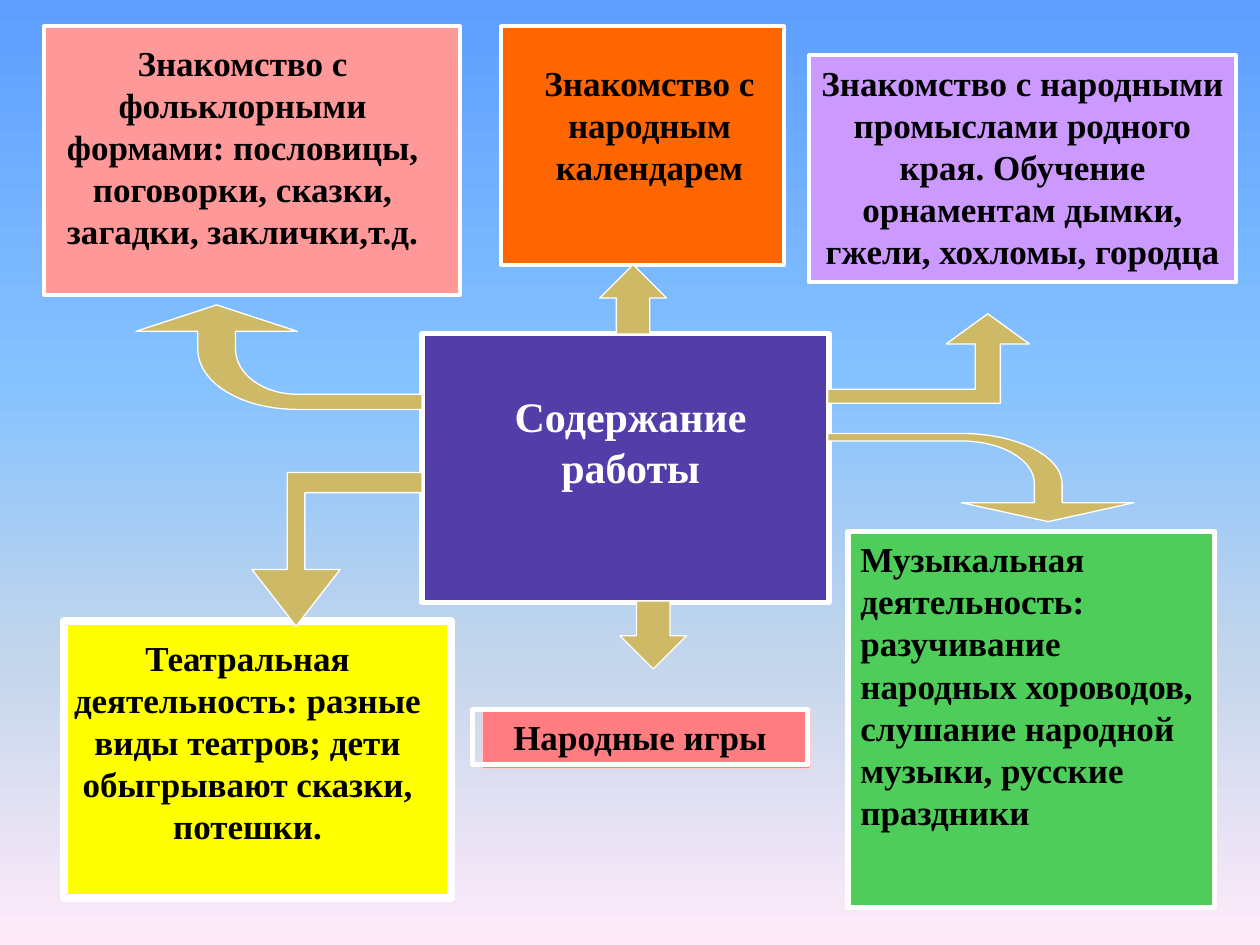
from lxml.etree import SubElement
from pptx import Presentation
from pptx.dml.color import RGBColor
from pptx.enum.shapes import MSO_SHAPE as Shape
from pptx.enum.text import MSO_ANCHOR as Anchor, MSO_AUTO_SIZE as AutoSize, PP_ALIGN as Align
from pptx.oxml.ns import qn
from pptx.util import Inches, Pt

WHITE = RGBColor(0xFF, 0xFF, 0xFF)
BLACK = RGBColor(0x00, 0x00, 0x00)
VIOLET = RGBColor(0x53, 0x3E, 0xA9)
ORANGE = RGBColor(0xFF, 0x66, 0x00)
PINK = RGBColor(0xFF, 0x99, 0x99)
LILAC = RGBColor(0xCC, 0x99, 0xFF)
CORAL = RGBColor(0xFF, 0x7C, 0x80)
PALE_PINK = RGBColor(0xFF, 0xCC, 0xCC)
YELLOW = RGBColor(0xFF, 0xFF, 0x00)
GREEN = RGBColor(0x4F, 0xCD, 0x5B)
SAND = RGBColor(0xCE, 0xB9, 0x66)
SKY_STOPS = [(0, RGBColor(0x5E, 0x9E, 0xFF)), (40, RGBColor(0x85, 0xC2, 0xFF)),
             (70, RGBColor(0xC4, 0xD6, 0xEB)), (100, RGBColor(0xFF, 0xEB, 0xFA))]


def paint(shape, fill, line, width):
    shape.shadow.inherit = False
    if fill is None:
        shape.fill.background()
    else:
        shape.fill.solid()
        shape.fill.fore_color.rgb = fill
    shape.line.color.rgb = line
    shape.line.width = Pt(width)


def write(shape, text, size=20, color=BLACK, align=Align.CENTER):
    frame = shape.text_frame
    frame.word_wrap = True
    frame.auto_size = AutoSize.NONE
    frame.vertical_anchor = Anchor.TOP
    frame.text = text
    paragraph = frame.paragraphs[0]
    paragraph.alignment = align
    font = paragraph.font
    font.name = "Times New Roman"
    font.size = Pt(size)
    font.bold = True
    font.color.rgb = color


prs = Presentation()
prs.slide_width = Inches(10)
prs.slide_height = Inches(7.5)
slide = prs.slides.add_slide(prs.slide_layouts[5])
shapes = slide.shapes

sky = slide.background.fill
sky.gradient()
sky.gradient_angle = 270
stop_list = slide.element.find(".//" + qn("a:gsLst"))
for old_stop in list(stop_list):
    stop_list.remove(old_stop)
for percent, color in SKY_STOPS:
    stop = SubElement(stop_list, qn("a:gs"), pos=str(percent * 1000))
    SubElement(stop, qn("a:srgbClr"), val=str(color))

panels = [
    (Shape.RECTANGLE, (3.35, 2.65, 3.23, 2.13), VIOLET, WHITE, 3),
    (Shape.RECTANGLE, (3.98, 0.21, 2.24, 1.89), ORANGE, WHITE, 2.25),
    (Shape.RECTANGLE, (0.35, 0.21, 3.3, 2.13), PINK, WHITE, 2.25),
    (Shape.RECTANGLE, (3.83, 5.63, 2.6, 0.47), CORAL, PALE_PINK, 0.75),
    (Shape.RECTANGLE, (0.51, 4.93, 3.07, 2.2), YELLOW, WHITE, 4.5),
    (Shape.UP_ARROW, (4.76, 2.1, 0.53, 0.55), SAND, WHITE, 0.75),
    (Shape.DOWN_ARROW, (4.92, 4.77, 0.53, 0.54), SAND, WHITE, 0.75),
]
for kind, place, fill, line, width in panels:
    paint(shapes.add_shape(kind, *map(Inches, place)), fill, line, width)

topic_boxes = [
    ("Знакомство с народными промыслами родного края. Обучение орнаментам дымки, гжели, "
     "хохломы, городца", (6.42, 0.44, 3.39, 1.8), LILAC, 2.25, Align.CENTER),
    ("Народные игры", (3.75, 5.63, 2.66, 0.44), None, 3, Align.CENTER),
    ("Музыкальная деятельность: разучивание народных хороводов, слушание народной музыки, "
     "русские праздники", (6.73, 4.22, 2.91, 2.98), GREEN, 3, Align.LEFT),
]
for text, place, fill, width, align in topic_boxes:
    topic = shapes.add_shape(Shape.RECTANGLE, *map(Inches, place))
    paint(topic, fill, WHITE, width)
    write(topic, text, align=align)

captions = [
    ("Знакомство с народным календарем", (4.06, 0.44, 2.19, 1.1)),
    ("Театральная деятельность: разные виды театров; дети обыгрывают сказки, потешки.",
     (0.31, 5, 3.31, 1.77)),
    ("Знакомство с фольклорными формами: пословицы, поговорки, сказки, загадки, "
     "заклички,т.д.", (0.27, 0.28, 3.31, 1.78)),
]
for text, place in captions:
    write(shapes.add_textbox(*map(Inches, place)), text)

title = shapes.title
title.left, title.top, title.width, title.height = map(Inches, (3.43, 3.05, 3.15, 0.91))
write(title, "Содержание работы", 24, WHITE)
shapes.element.append(title.element)

# Six numbers describe a Bézier curve, two a straight step.
arrow_outlines = [
    [(7.84, 2.49), (7.51, 2.73), (7.74, 2.73), (7.74, 3.09), (6.57, 3.09),
     (6.57, 3.2), (7.94, 3.2), (7.94, 2.73), (8.17, 2.73)],
    [(2.35, 4.97), (2.7, 4.52), (2.42, 4.52), (2.42, 3.91), (3.35, 3.91),
     (3.35, 3.75), (2.28, 3.75), (2.28, 4.52), (2, 4.52)],
    [(8.32, 4.14), (9, 3.99), (8.43, 3.99), (8.43, 3.84),
     (8.43, 3.62, 8.07, 3.44, 7.63, 3.44), (6.57, 3.44), (6.57, 3.5), (7.63, 3.5),
     (7.95, 3.5, 8.21, 3.65, 8.21, 3.84), (8.21, 3.99), (7.63, 3.99)],
    [(1.72, 2.42), (1.08, 2.63), (1.57, 2.63), (1.57, 2.77),
     (1.57, 3.04, 1.92, 3.25, 2.36, 3.25), (3.35, 3.25), (3.35, 3.13), (2.36, 3.13),
     (2.09, 3.13, 1.87, 2.97, 1.87, 2.77), (1.87, 2.63), (2.36, 2.63)],
]
CURVE_STEPS = 16
for outline in arrow_outlines:
    points = []
    for step in outline:
        if len(step) == 2:
            points.append(step)
            continue
        start = points[-1]
        for i in range(1, CURVE_STEPS + 1):
            t = i / CURVE_STEPS
            u = 1 - t
            points.append(tuple(
                u**3 * start[k] + 3 * u**2 * t * step[k]
                + 3 * u * t**2 * step[k + 2] + t**3 * step[k + 4] for k in (0, 1)))
    corners = [(Inches(x), Inches(y)) for x, y in points]
    builder = shapes.build_freeform(*corners[0])
    builder.add_line_segments(corners[1:], close=True)
    paint(builder.convert_to_shape(), SAND, WHITE, 0.75)

prs.save("out.pptx")
